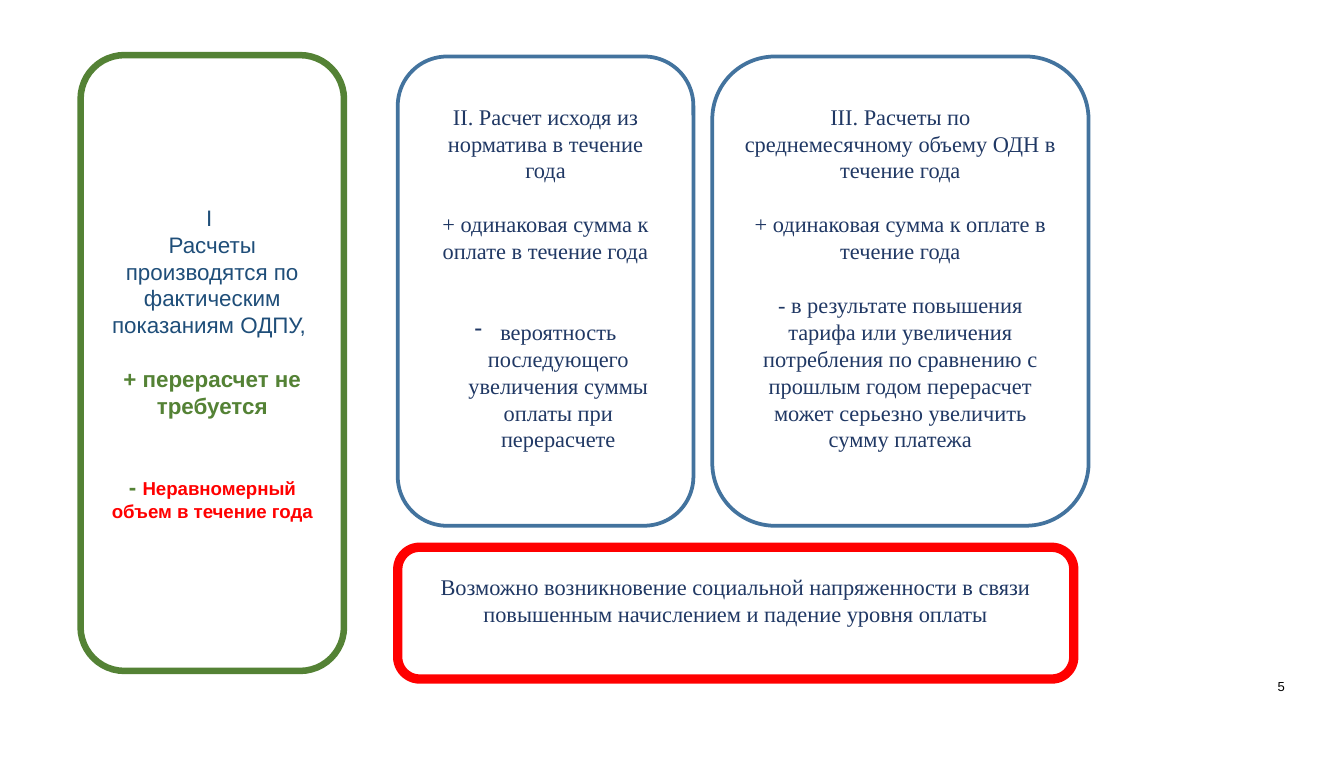
from lxml import etree
from pptx import Presentation
from pptx.dml.color import RGBColor
from pptx.enum.shapes import MSO_SHAPE
from pptx.enum.text import MSO_ANCHOR, PP_ALIGN
from pptx.oxml.ns import qn
from pptx.util import Inches, Pt

ROUNDED = MSO_SHAPE.ROUNDED_RECTANGLE
MIDDLE, BOTTOM = MSO_ANCHOR.MIDDLE, MSO_ANCHOR.BOTTOM
CENTER, RIGHT = PP_ALIGN.CENTER, PP_ALIGN.RIGHT
SANS, SERIF = "Arial", "Times New Roman"
COLORS = {"white": "FFFFFF", "black": "000000", "green": "548235", "red": "FF0000",
          "steel": "43739E", "blue": "1F4E79", "navy": "203864"}
LINE = 14.4  # height of one text line, points

deck = Presentation()
deck.slide_width, deck.slide_height = Inches(10), Inches(5.63)
page = deck.slides.add_slide(deck.slide_layouts[6])

# Columns and rows of the layout, inches
MIDDLE_LEFT, RIGHT_LEFT = 2.96, 5.3
TOP, CARD_HEIGHT = 0.42, 3.49


def add_span(para, text, font, size, color, bold=False):
    span = para.add_run()
    span.text = text
    span.font.name, span.font.size, span.font.bold = font, Pt(size), bold
    span.font.color.rgb = RGBColor.from_string(COLORS[color])


# Each paragraph: lines of space before, dash bullet, spans (text, size, colour, bold)
actual = [
    (0, False, [("I ", 12, "blue", False)]),
    (0, False, [("Расчеты производятся по фактическим показаниям ОДПУ, ", 12, "blue", False)]),
    (1, False, [("+ перерасчет не требуется", 12, "green", True)]),
    (2, False, [("- ", 12, "green", True),
                ("Неравномерный объем в течение года", 10, "red", True)]),
]
equal_sum = "+ одинаковая сумма к оплате в течение года"
norm = [
    (0, False, [("II. Расчет исходя из норматива в течение года", 12, "navy", False)]),
    (1, False, [(equal_sum, 12, "navy", False)]),
    (2, True, [("вероятность последующего увеличения суммы оплаты при перерасчете",
                12, "navy", False)]),
]
average = [
    (0, False, [("III. Расчеты по среднемесячному объему ОДН в течение года",
                 12, "navy", False)]),
    (1, False, [(equal_sum, 12, "navy", False)]),
    (1, False, [("- в результате повышения тарифа или увеличения потребления по сравнению "
                 "с прошлым годом перерасчет может серьезно увеличить сумму платежа",
                 12, "navy", False)]),
]
tension = [
    (0, False, [("Возможно возникновение социальной напряженности в связи "
                 "повышенным начислением и падение уровня оплаты", 12, "navy", False)]),
]

# Cards: left, top, width, height, line colour, line width, font, lines kept free below, text
cards = [
    (0.6, 0.41, 1.96, 4.58, "green", 3.5, SANS, 0, actual),
    (MIDDLE_LEFT, TOP, 2.2, CARD_HEIGHT, "steel", 2, SERIF, 1, norm),
    (MIDDLE_LEFT, 4.07, 5.03, 0.98, "red", 5, SERIF, 1, tension),
    (RIGHT_LEFT, TOP, 2.8, CARD_HEIGHT, "steel", 2, SERIF, 1, average),
]
for left, top, width, height, line_color, line_width, font, free_lines, content in cards:
    card = page.shapes.add_shape(ROUNDED, Inches(left), Inches(top),
                                 Inches(width), Inches(height))
    card.shadow.inherit = False
    card.fill.solid()
    card.fill.fore_color.rgb = RGBColor.from_string(COLORS["white"])
    card.line.color.rgb = RGBColor.from_string(COLORS[line_color])
    card.line.width = Pt(line_width)
    frame = card.text_frame
    frame.word_wrap, frame.vertical_anchor = True, MIDDLE
    frame.margin_bottom = Inches(0.05) + Pt(LINE * free_lines)
    for index, (gap, dashed, spans) in enumerate(content):
        para = frame.paragraphs[0] if index == 0 else frame.add_paragraph()
        para.alignment = CENTER
        if gap:
            para.space_before = Pt(LINE * gap)
        if dashed:
            props = para._p.get_or_add_pPr()
            props.set("marL", str(Inches(0.19)))
            props.set("indent", str(-Inches(0.19)))
            etree.SubElement(props, qn("a:buChar")).set("char", "-")
        for text, size, color, bold in spans:
            add_span(para, text, font, size, color, bold)

# Page number
number = page.shapes.add_textbox(Inches(8.95), Inches(5.01), Inches(0.61), Inches(0.15))
frame = number.text_frame
frame.margin_left = frame.margin_right = frame.margin_top = frame.margin_bottom = 0
frame.word_wrap, frame.vertical_anchor = True, BOTTOM
frame.paragraphs[0].alignment = RIGHT
add_span(frame.paragraphs[0], "5", SANS, 7, "black")

deck.save("out.pptx")
